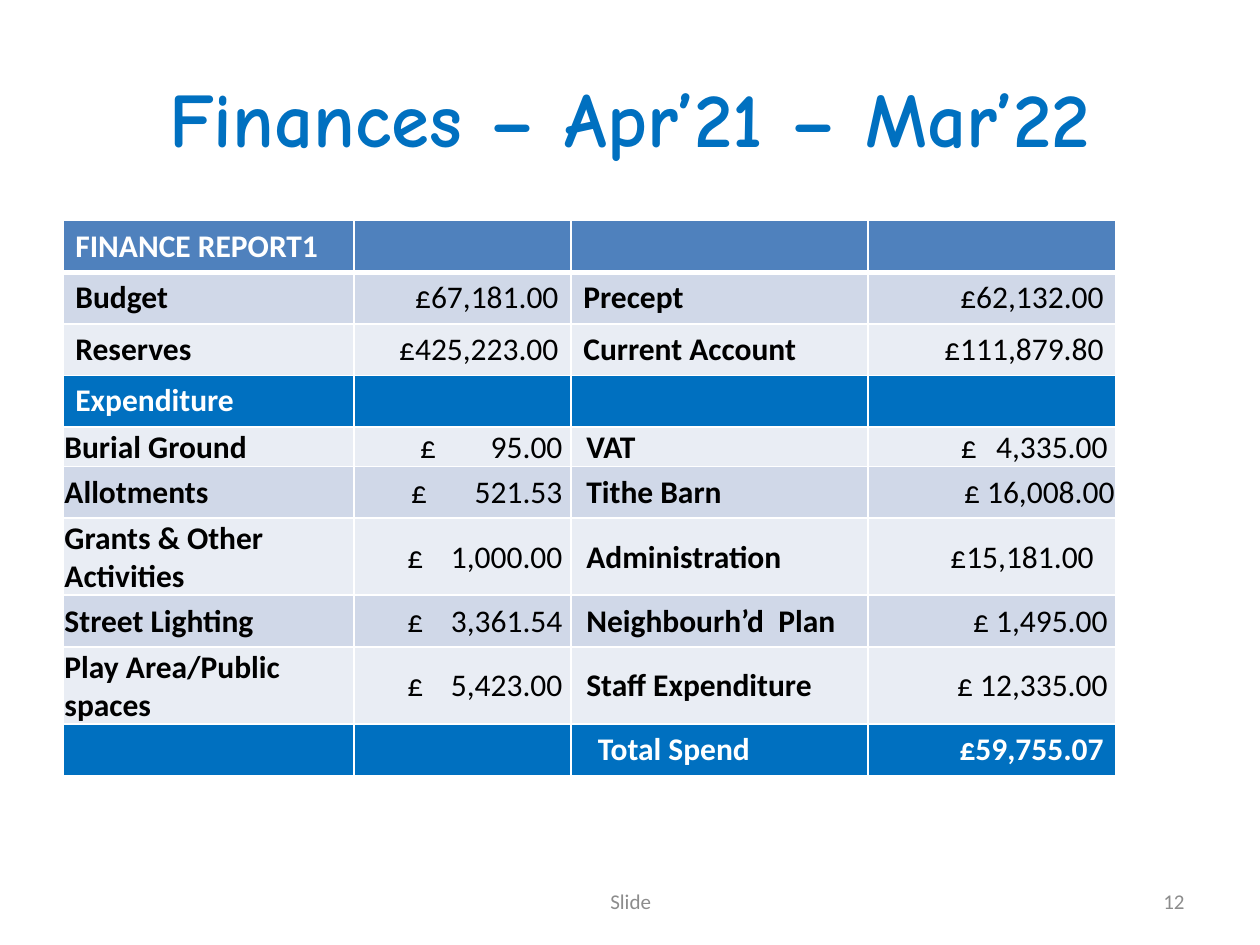
from dataclasses import dataclass
from lxml.etree import SubElement as Sub
from pptx import Presentation
from pptx.dml.color import RGBColor as RGB
from pptx.enum.text import MSO_ANCHOR as Anchor, PP_ALIGN as Align
from pptx.oxml.ns import qn
from pptx.util import Cm, Pt


@dataclass(frozen=True)
class Theme:
    body: str = "Calibri"
    head: str = "Comic Neue"
    blue: str = "0070C0"
    top: str = "4F81BD"
    bands: tuple = ("E9EDF4", "D0D8E8")
    white: str = "FFFFFF"
    ink: str = "000000"
    grey: str = "8C8C8C"
    big: int = 44
    text: int = 18
    small: int = 12


T = Theme()
L, C, R = Align.LEFT, Align.CENTER, Align.RIGHT

# Content: an amount may be (pound sign position, figure) or (figure, right margin)
TITLE = "Finances – Apr’21 – Mar’22"
FOOT = [("Slide", 8.69, 8.05, C), ("12", 18.21, 5.92, R)]
ROWS = [
    ("top", "FINANCE REPORT1", "", "", ""),
    ("sum", "Budget", "£67,181.00", "Precept", "£62,132.00"),
    ("sum", "Reserves", "£425,223.00", "Current Account", "£111,879.80"),
    ("bar", "Expenditure", "", "", ""),
    ("cost", "Burial Ground", (1.3, "95.00"), "VAT", (1.84, "4,335.00")),
    ("cost", "Allotments", (1.12, "521.53"), "Tithe Barn", ("£ 16,008.00", 0.03)),
    ("cost", "Grants & Other Activities", (1.04, "1,000.00"),
     "Administration", ("£15,181.00", 0.45)),
    ("cost", "Street Lighting", (1.04, "3,361.54"),
     "Neighbourh’d  Plan", "£ 1,495.00"),
    ("cost", "Play Area/Public spaces", (1.04, "5,423.00"),
     "Staff Expenditure", "£ 12,335.00"),
    ("bar", "", "", "Total Spend", "£59,755.07"),
]
COLS = [5.87, 4.37, 5.99, 5.0]
HIGH, THIN = 1.04, 0.36
EDGE, PAD, GAP = 0.03, 0.25, 0.17


def style(para, size, color, bold=False, face=T.body, align=L):
    para.alignment = align
    font = para.font
    font.name, font.size, font.bold = face, Pt(size), bold
    font.color.rgb = RGB.from_string(color)


def label(slide, text, box, *look, **more):
    frame = slide.shapes.add_textbox(*map(Cm, box)).text_frame
    frame.word_wrap = True
    frame.vertical_anchor = Anchor.MIDDLE
    para = frame.paragraphs[0]
    para.text = text
    style(para, *look, **more)


def stops(para, *tabs):
    tab_list = Sub(para._p.get_or_add_pPr(), qn("a:tabLst"))
    for pos, kind in tabs:
        Sub(tab_list, qn("a:tab"), pos=str(Cm(pos)), algn=kind)


def border(cell, last):
    props = cell._tc.get_or_add_tcPr()
    for i, side in enumerate(("lnL", "lnR", "lnT", "lnB")):
        wide = Pt(3 if last and side == "lnB" else 1)
        line = props.makeelement(qn("a:" + side), {"w": str(wide)})
        Sub(Sub(line, qn("a:solidFill")), qn("a:srgbClr"), val=T.white)
        props.insert(i, line)


def fill(cell, kind, row, col, value):
    cost, money = kind == "cost", col % 2 == 1
    solid = {"top": T.top, "bar": T.blue}.get(kind, T.bands[row % 2])
    cell.fill.solid()
    cell.fill.fore_color.rgb = RGB.from_string(solid)
    border(cell, kind == "top")

    # Margins
    left = right = PAD
    if cost:
        cell.vertical_anchor = Anchor.MIDDLE
        cell.margin_top, cell.margin_bottom = Cm(EDGE), 0
        left, right = (0.31 if col == 2 else EDGE), (GAP if money else EDGE)
    elif kind == "bar" and col == 2:
        left = 0.54

    # Text, with tab stops where the pound sign stands apart
    para = cell.text_frame.paragraphs[0]
    align = R if money else L
    if isinstance(value, tuple):
        if isinstance(value[0], str):
            value, right = value
        else:
            start, value = value
            value = f"\t£\t{value}"
            stops(para, (start, "l"), (COLS[col] - GAP - EDGE, "r"))
            align, right = L, EDGE
    cell.margin_left, cell.margin_right = Cm(left), Cm(right)
    if value:
        para.text = value
    dark = kind in ("sum", "cost")
    style(para, T.text, T.ink if dark else T.white,
          not (dark and money), align=align)


def main():
    deck = Presentation()
    deck.slide_width, deck.slide_height = Cm(25.4), Cm(19.05)
    slide = deck.slides.add_slide(deck.slide_layouts[6])

    # Title
    label(slide, TITLE, (1.27, 0.76, 22.86, 3.18), T.big, T.blue, True,
          face=T.head, align=C)

    # Finance table
    box = map(Cm, (1.27, 4.45, sum(COLS), HIGH * len(ROWS)))
    table = slide.shapes.add_table(len(ROWS), len(COLS), *box).table
    table.first_row = table.horz_banding = False
    for col, wide in enumerate(COLS):
        table.columns[col].width = Cm(wide)
    for row, (kind, *values) in enumerate(ROWS):
        table.rows[row].height = Cm(THIN if row == 4 else HIGH)
        for col, value in enumerate(values):
            fill(table.cell(row, col), kind, row, col, value)

    # Footer
    for text, left, wide, align in FOOT:
        label(slide, text, (left, 17.65, wide, 1.02), T.small, T.grey,
              align=align)

    deck.save("out.pptx")


if __name__ == "__main__":
    main()
